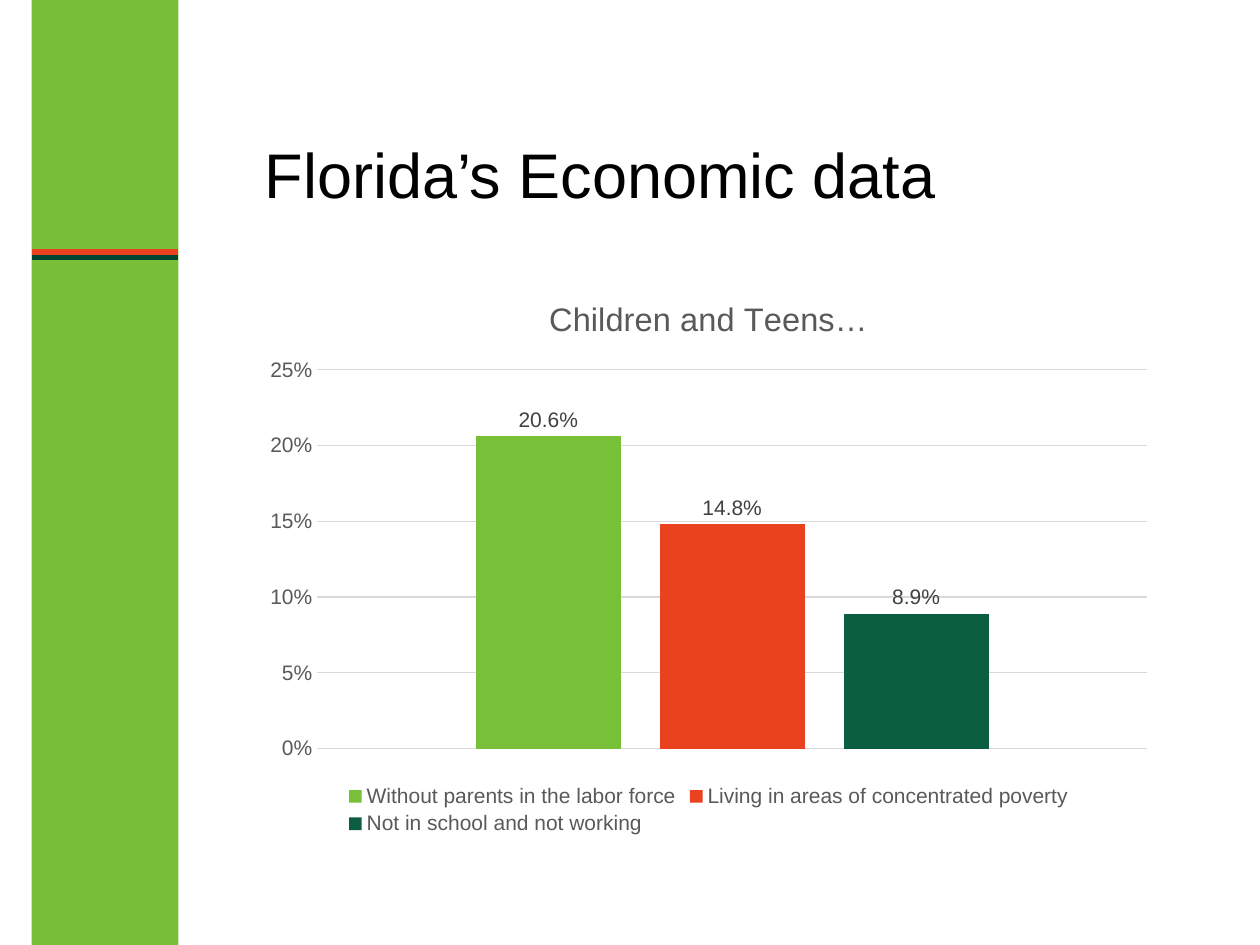
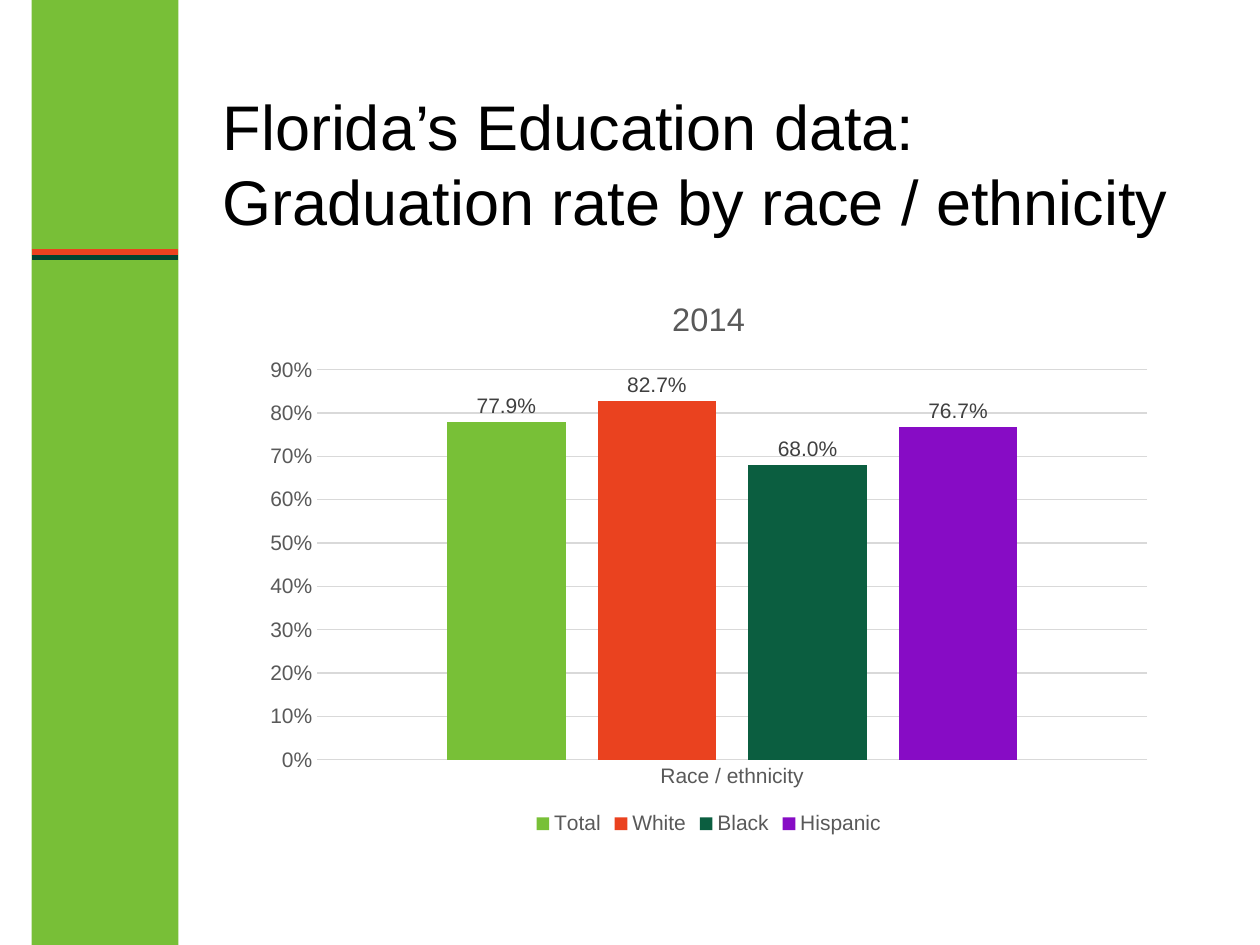
from pptx import Presentation
from pptx.chart.data import CategoryChartData
from pptx.dml.color import RGBColor
from pptx.enum.chart import XL_CHART_TYPE, XL_LABEL_POSITION, XL_LEGEND_POSITION, XL_TICK_MARK
from pptx.enum.shapes import MSO_CONNECTOR, MSO_SHAPE
from pptx.enum.text import MSO_ANCHOR, MSO_AUTO_SIZE, PP_ALIGN
from pptx.oxml.ns import qn
from pptx.util import Inches, Pt
from lxml import etree

COLUMN = XL_CHART_TYPE.COLUMN_CLUSTERED
ABOVE = XL_LABEL_POSITION.OUTSIDE_END
BOTTOM = XL_LEGEND_POSITION.BOTTOM
NO_TICK = XL_TICK_MARK.NONE
LINE = MSO_CONNECTOR.STRAIGHT
RECT = MSO_SHAPE.RECTANGLE
MIDDLE = MSO_ANCHOR.MIDDLE
FIXED = MSO_AUTO_SIZE.NONE
LEFT = PP_ALIGN.LEFT

COLS, ROWS = 120, 90
FONT = "Arial"
BLACK, GREY, DARK, RULE = "000000", "595959", "404040", "D9D9D9"
BAND, RED, PINE = "78BF37", "EA421F", "004531"
BARS = ["78C037", RED, "0B5E40", "870CC5"]


def color(code):
    return RGBColor.from_string(code)


class Deck:
    def __init__(self):
        self.file = Presentation()
        self.file.slide_width, self.file.slide_height = Inches(10), Inches(7.5)
        self.layout = self.file.slide_layouts[5]
        self.slide = None

    def x(self, col):
        return round(self.file.slide_width * col / COLS)

    def y(self, row):
        return round(self.file.slide_height * row / ROWS)

    def box(self, col, row, wide, high):
        return self.x(col), self.y(row), self.x(wide), self.y(high)

    def page(self):
        self.slide = self.file.slides.add_slide(self.layout)

    def share(self, shape, number):
        shape.element.xpath(".//p:cNvPr")[0].set("id", str(number))
        self.layout.shapes.element.append(shape.element)

    def band(self):
        bar = self.slide.shapes.add_shape(RECT, *self.box(3, 0, 14, ROWS))
        bar.shadow.inherit = False
        bar.fill.solid()
        bar.fill.fore_color.rgb = color(BAND)
        bar.line.fill.background()
        self.share(bar, 100)

    def stripe(self, row, code, number):
        line = self.slide.shapes.add_connector(
            LINE, self.x(3), self.y(row), self.x(17), self.y(row))
        line.line.color.rgb = color(code)
        line.line.width = Pt(3)
        etree.SubElement(line.element.spPr, qn("a:effectLst"))
        self.share(line, number)

    def style(self, font, size, code):
        font.name = FONT
        font.size = Pt(size)
        font.color.rgb = color(code)

    def title(self, text, *place):
        head = self.slide.shapes.title
        head.left, head.top, head.width, head.height = self.box(*place)
        frame = head.text_frame
        frame.word_wrap = True
        frame.auto_size = FIXED
        frame.vertical_anchor = MIDDLE
        para = frame.paragraphs[0]
        para.text = text
        para.alignment = LEFT
        for run in para.runs:
            self.style(run.font, 36, BLACK)

    def axis(self, axis):
        axis.major_tick_mark = axis.minor_tick_mark = NO_TICK
        self.style(axis.tick_labels.font, 12, GREY)

    def rule(self, line):
        line.color.rgb = color(RULE)
        line.width = Pt(0.75)

    def chart(self, name, group, bars, top, step, show):
        data = CategoryChartData(number_format="0.0%")
        data.categories = [group]
        for label, value in bars:
            data.add_series(label, [value])
        chart = self.slide.shapes.add_chart(COLUMN, *self.box(24, 26, 87, 54), data).chart
        self.style(chart.font, 10, BLACK)

        chart.has_title = True
        para = chart.chart_title.text_frame.paragraphs[0]
        para.text = name
        self.style(para.runs[0].font, 18.6, GREY)
        para.runs[0].font.bold = False
        chart.chart_title.include_in_layout = False

        chart.has_legend = True
        chart.legend.position = BOTTOM
        chart.legend.include_in_layout = False
        self.style(chart.legend.font, 12, GREY)

        cats, vals = chart.category_axis, chart.value_axis
        self.axis(cats)
        self.rule(cats.format.line)
        cats.visible = show
        self.axis(vals)
        vals.format.line.fill.background()
        self.rule(vals.major_gridlines.format.line)
        vals.minimum_scale, vals.maximum_scale, vals.major_unit = 0, top, step
        vals.tick_labels.number_format = "0%"
        vals.tick_labels.number_format_is_linked = False

        plot = chart.plots[0]
        plot.vary_by_categories = False
        plot.gap_width, plot.overlap = 219, -27
        for bar, code in zip(plot.series, BARS):
            bar.format.fill.solid()
            bar.format.fill.fore_color.rgb = color(code)
            bar.invert_if_negative = False
            tags = bar.data_labels
            tags.show_value = True
            tags.position = ABOVE
            tags.number_format = "0.0%"
            tags.number_format_is_linked = False
            self.style(tags.font, 12, DARK)


def main():
    deck = Deck()
    deck.page()
    deck.band()
    deck.stripe(24, RED, 101)
    deck.stripe(24.5, PINE, 102)
    deck.title("Florida’s Economic data", 24, 9, 87, 15)
    deck.chart("Children and Teens…", "1", [
        ("Without parents in the labor force", 0.206),
        ("Living in areas of concentrated poverty", 0.148),
        ("Not in school and not working", 0.089),
    ], 0.25, 0.05, False)

    deck.page()
    deck.title("Florida’s Education data:\nGraduation rate by race / ethnicity", 20, 8, 95, 15)
    deck.chart("2014", "Race / ethnicity", [
        ("Total", 0.779),
        ("White", 0.827),
        ("Black", 0.68),
        ("Hispanic", 0.767),
    ], 0.9, 0.1, True)
    deck.file.save("out.pptx")


if __name__ == "__main__":
    main()
